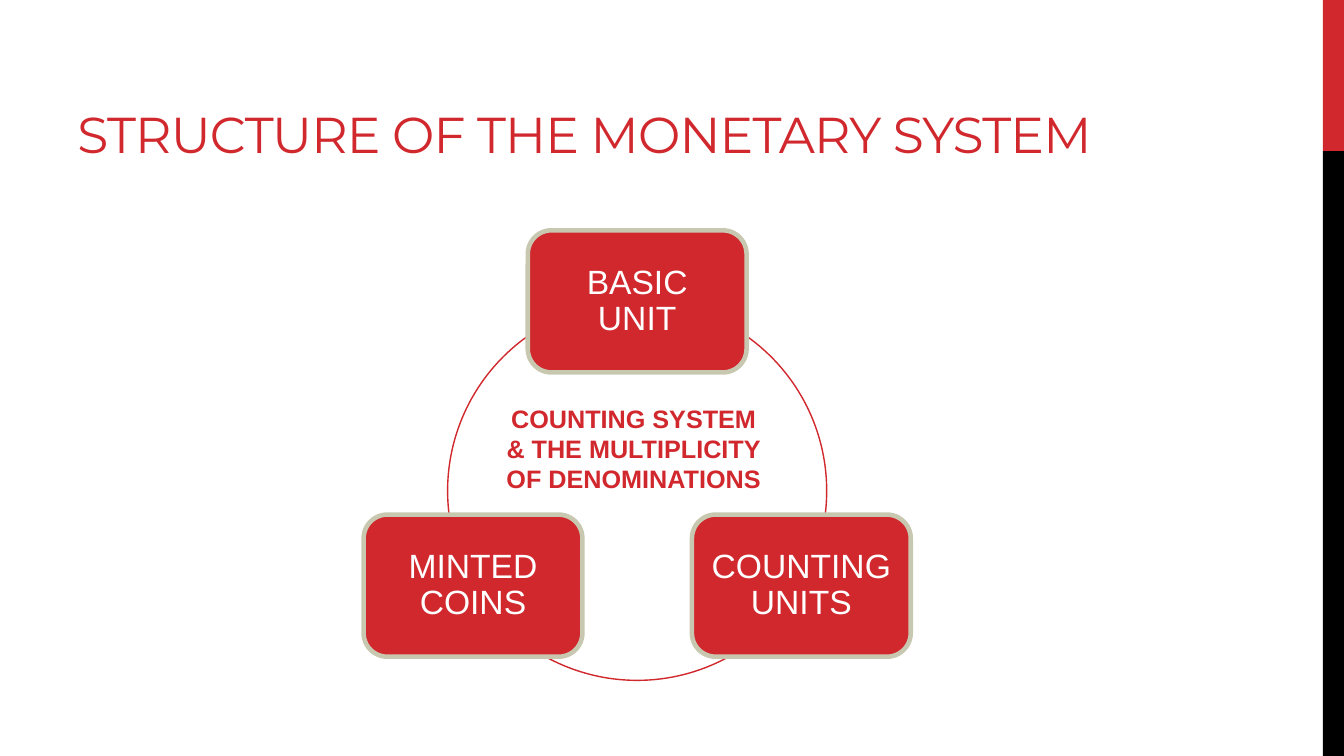
from dataclasses import dataclass
from math import cos, radians, sin

from pptx import Presentation
from pptx.dml.color import RGBColor
from pptx.enum.shapes import MSO_SHAPE
from pptx.enum.text import MSO_ANCHOR, PP_ALIGN
from pptx.util import Inches, Pt


@dataclass(frozen=True)
class Theme:
    """Colours, fonts and type sizes of the slide."""
    red: RGBColor = RGBColor.from_string("D1282E")
    black: RGBColor = RGBColor.from_string("000000")
    white: RGBColor = RGBColor.from_string("FFFFFF")
    sand: RGBColor = RGBColor.from_string("C8C8B1")
    title_font: str = "Montserrat"
    body_font: str = "Arial"
    title_size: Pt = Pt(36)
    node_size: Pt = Pt(24)
    hub_size: Pt = Pt(18)


THEME = Theme()
CENTER_X, CENTER_Y, RADIUS = 6.32, 4.87, 1.88
NODE_W, NODE_H = 2.17, 1.41
NODES = {"BASIC UNIT": -90, "COUNTING UNITS": 30, "MINTED COINS": 150}
ARCS = [(305.6, 6.7), (61.7, 118.3), (173.3, 234.4)]


def set_attrs(obj, values):
    """Set every attribute named in a dict."""
    for name, value in values.items():
        setattr(obj, name, value)


def add_shape(s, kind, box, fill=None, line=None, weight=1):
    """Add a preset shape without shadow."""
    sp = s.shapes.add_shape(kind, *map(Inches, box))
    sp.shadow.inherit = False
    if fill is None:
        sp.fill.background()
    else:
        sp.fill.solid()
        sp.fill.fore_color.rgb = fill
    if line is None:
        sp.line.fill.background()
    else:
        sp.line.color.rgb = line
        sp.line.width = Pt(weight)
    return sp


def write(tf, lines, color, font, frame, paragraph):
    """Write lines as formatted paragraphs and return their runs."""
    set_attrs(tf, frame)
    runs = []
    for i, text in enumerate(lines):
        p = tf.add_paragraph() if i else tf.paragraphs[0]
        set_attrs(p, paragraph)
        r = p.add_run()
        r.text = text
        set_attrs(r.font, font)
        r.font.color.rgb = color
        runs.append(r)
    return runs


def add_title(s, text):
    """Add the bottom-anchored title with tightened letters."""
    sp = s.shapes.add_textbox(*map(Inches, (0.67, 0.17, 12.16, 1.5)))
    font = {"name": THEME.title_font, "size": THEME.title_size}
    frame = {"word_wrap": True, "vertical_anchor": MSO_ANCHOR.BOTTOM}
    for r in write(sp.text_frame, [text], THEME.red, font, frame, {}):
        r.font._element.set("spc", "-60")


def add_arc(s, start, end):
    """Add a piece of the ring between two clockwise angles."""
    box = (CENTER_X - RADIUS, CENTER_Y - RADIUS, 2 * RADIUS, 2 * RADIUS)
    sp = add_shape(s, MSO_SHAPE.ARC, box, line=THEME.red)
    for i, angle in enumerate((start, end)):
        sp.adjustments[i] = angle * 0.6


def add_node(s, text, angle):
    """Add a rounded box centred on the ring at an angle."""
    x = CENTER_X + RADIUS * cos(radians(angle)) - NODE_W / 2
    y = CENTER_Y + RADIUS * sin(radians(angle)) - NODE_H / 2
    sp = add_shape(s, MSO_SHAPE.ROUNDED_RECTANGLE, (x, y, NODE_W, NODE_H),
                   THEME.red, THEME.sand, 3.25)
    font = {"name": THEME.body_font, "size": THEME.node_size}
    frame = {"word_wrap": True, "vertical_anchor": MSO_ANCHOR.MIDDLE}
    frame |= {f"margin_{side}": Inches(0.1)
              for side in ("left", "top", "right", "bottom")}
    write(sp.text_frame, [text], THEME.white, font, frame,
          {"alignment": PP_ALIGN.CENTER, "line_spacing": 0.9})


def add_hub(s, lines):
    """Add the bold text inside the ring."""
    sp = s.shapes.add_textbox(*map(Inches, (4.91, 3.95, 2.75, 1.01)))
    font = {"name": THEME.body_font, "size": THEME.hub_size, "bold": True}
    write(sp.text_frame, lines, THEME.red, font, {"word_wrap": False},
          {"alignment": PP_ALIGN.CENTER})


def main():
    """Build and save the slide."""
    prs = Presentation()
    set_attrs(prs, {"slide_width": Inches(13.33), "slide_height": Inches(7.5)})
    s = prs.slides.add_slide(prs.slide_layouts[6])
    for top, height, color in ((0, 1.5, THEME.red), (1.5, 6, THEME.black)):
        add_shape(s, MSO_SHAPE.RECTANGLE, (13.12, top, 0.21, height), color)
    add_title(s, "STRUCTURE OF THE MONETARY SYSTEM")
    for start, end in ARCS:
        add_arc(s, start, end)
    for text, angle in NODES.items():
        add_node(s, text, angle)
    add_hub(s, ["COUNTING SYSTEM", "& THE MULTIPLICITY", "OF DENOMINATIONS"])
    prs.save("out.pptx")


if __name__ == "__main__":
    main()
